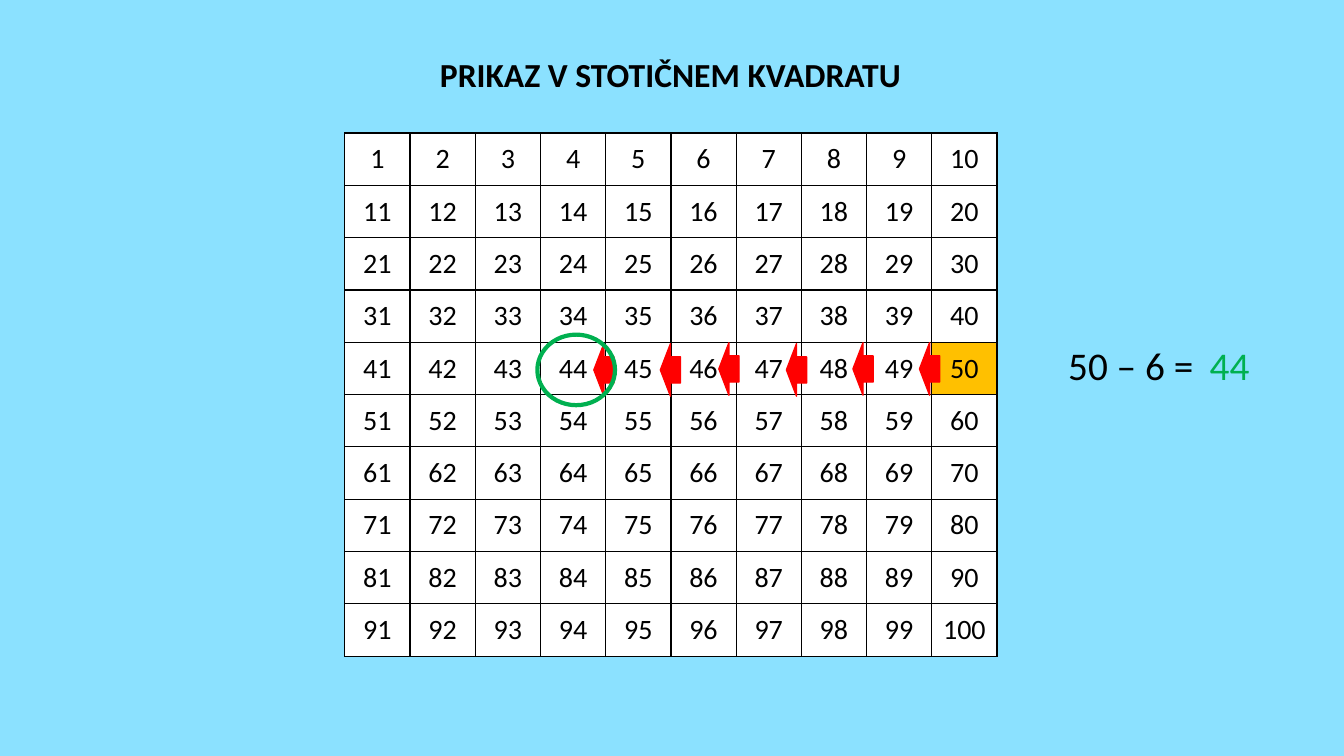
from lxml import etree
from pptx import Presentation, util as u
from pptx.dml.color import RGBColor
from pptx.enum import shapes, text
from pptx.oxml.ns import qn

TITLE = "PRIKAZ V STOTIČNEM KVADRATU"
EXPRESSION = "50 – 6 ="
START, STEPS = 50, 6
RESULT = START - STEPS
SIDE = 10
GRID = (3.42, 1.32, 6.47, 5.19)
ARROWS = [(9.12, 3.4), (8.46, 3.4), (7.8, 3.41), (7.13, 3.4), (6.55, 3.41), (5.89, 3.41)]
ARROW_SIZE = (0.2, 0.52)
RING = (5.33, 3.32, 0.77, 0.7)

THEME = {
    "font": "Calibri",
    "background": "8BE1FF",
    "ink": "000000",
    "cell": "FFFFFF",
    "start": "FFC000",
    "arrow": "FF0000",
    "result": "00B050",
    "title_size": 24,
    "cell_size": 20,
    "sum_size": 28,
}


def color(name):
    return RGBColor.from_string(THEME[name])


def inches(values):
    return [u.Inches(value) for value in values]


def paint(fill, name):
    fill.solid()
    fill.fore_color.rgb = color(name)


def write(frame, words, size, ink="ink", bold=False, centred=True):
    para = frame.paragraphs[0]
    para.add_run().text = words
    para.alignment = text.PP_ALIGN.CENTER if centred else text.PP_ALIGN.LEFT
    para.font.name = THEME["font"]
    para.font.size = u.Pt(THEME[size])
    para.font.bold = bold
    para.font.color.rgb = color(ink)


def add_text(page, at, words, size, anchor=text.MSO_ANCHOR.TOP, **style):
    frame = page.shapes.add_textbox(*inches(at)).text_frame
    frame.word_wrap = True
    frame.vertical_anchor = anchor
    write(frame, words, size, **style)


def add_outlined(page, preset, at, line_color, width):
    shape = page.shapes.add_shape(preset, *inches(at))
    shape.shadow.inherit = False
    shape.line.color.rgb = color(line_color)
    shape.line.width = u.Pt(width)
    return shape


def border(cell):
    properties = cell._tc.get_or_add_tcPr()
    for side in ("lnL", "lnR", "lnT", "lnB"):
        line = etree.SubElement(properties, qn(f"a:{side}"), w=str(u.Pt(1)))
        fill = etree.SubElement(line, qn("a:solidFill"))
        etree.SubElement(fill, qn("a:srgbClr"), val=THEME["ink"])


def add_hundred_square(page):
    table = page.shapes.add_table(SIDE, SIDE, *inches(GRID)).table
    for column in table.columns:
        column.width = u.Inches(GRID[2] / SIDE)
    for row in table.rows:
        row.height = u.Inches(GRID[3] / SIDE)
    for number, cell in enumerate(table.iter_cells(), 1):
        border(cell)
        paint(cell.fill, "start" if number == START else "cell")
        cell.vertical_anchor = text.MSO_ANCHOR.MIDDLE
        write(cell.text_frame, str(number), "cell_size")


def main():
    deck = Presentation()
    deck.slide_width, deck.slide_height = inches((13.33, 7.5))
    page = deck.slides.add_slide(deck.slide_layouts[6])
    paint(page.background.fill, "background")

    add_hundred_square(page)
    add_text(page, (3.08, 0.49, 7.14, 0.5), TITLE, "title_size", bold=True)
    add_text(page, (10.23, 3.32, 1.97, 0.59), EXPRESSION, "sum_size",
             anchor=text.MSO_ANCHOR.MIDDLE)
    for place in ARROWS:
        arrow = add_outlined(page, shapes.MSO_SHAPE.LEFT_ARROW, place + ARROW_SIZE, "arrow", 1)
        paint(arrow.fill, "arrow")
    ring = add_outlined(page, shapes.MSO_SHAPE.OVAL, RING, "result", 3)
    ring.fill.background()
    add_text(page, (11.9, 3.34, 0.77, 0.57), str(RESULT), "sum_size",
             ink="result", centred=False)
    deck.save("out.pptx")


if __name__ == "__main__":
    main()
